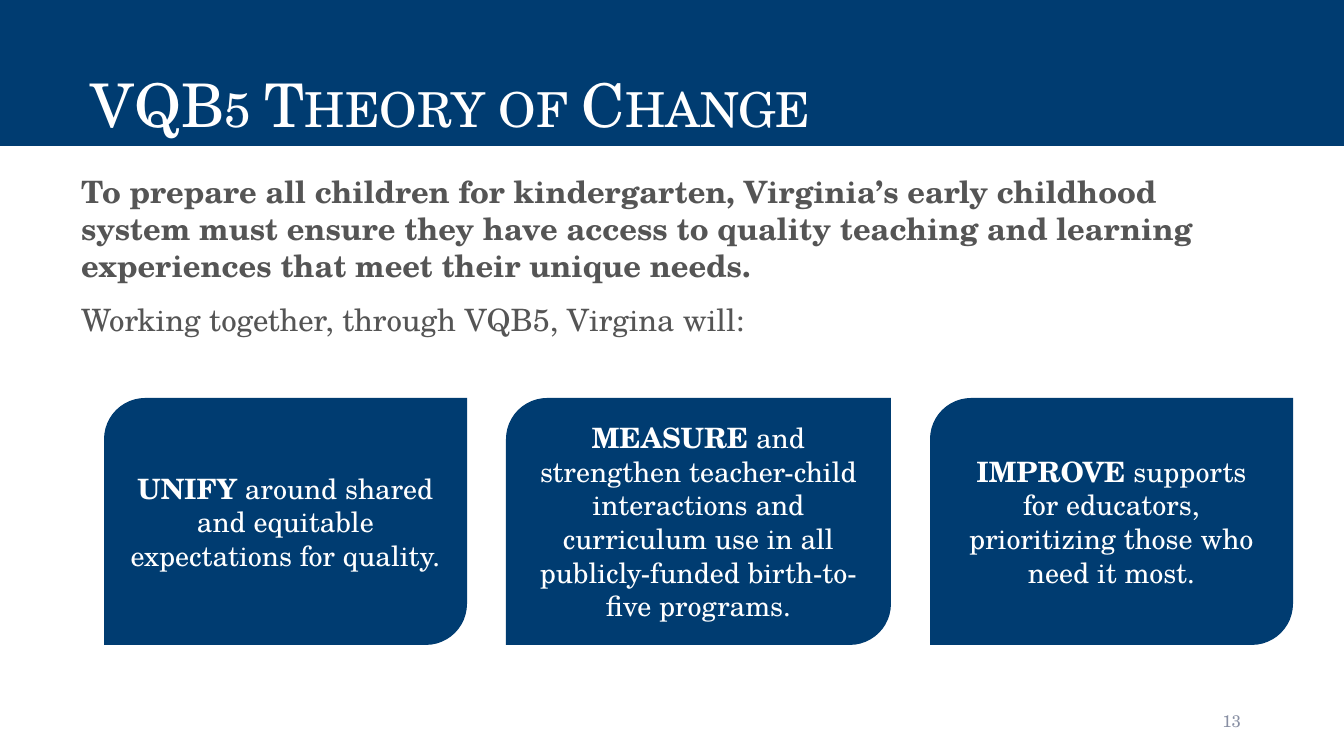
from dataclasses import dataclass

from lxml.etree import SubElement
from pptx import Presentation
from pptx.dml.color import RGBColor
from pptx.enum.shapes import MSO_SHAPE
from pptx.enum.text import MSO_ANCHOR, MSO_AUTO_SIZE, PP_ALIGN
from pptx.oxml.ns import qn
from pptx.util import Emu, Pt


@dataclass(frozen=True)
class Theme:
    font: str = "TeX Gyre Schola"
    navy: RGBColor = RGBColor(0x00, 0x3C, 0x71)
    white: RGBColor = RGBColor(0xFF, 0xFF, 0xFF)
    text: RGBColor = RGBColor(0x55, 0x55, 0x55)
    muted: RGBColor = RGBColor(0x88, 0x8F, 0xA3)
    title: int = 43
    body: int = 22
    card: int = 20
    note: int = 12


THEME = Theme()
SCALE = 914400 / 100.8

CARD_TOP, CARD_H, CARD_GAP = 398, 247, 39
CARDS = [
    (363, "UNIFY", " around shared and equitable expectations for quality."),
    (385, "MEASURE", " and strengthen teacher-child interactions and "
     "curriculum use in all publicly-funded birth-to-five programs."),
    (363, "IMPROVE", " supports for educators, prioritizing those who "
     "need it most."),
]
LEAD = ("To prepare all children for kindergarten, Virginia’s early childhood "
        "system must ensure they have access to quality teaching and learning "
        "experiences that meet their unique needs.")
INTRO = "Working together, through VQB5, Virgina will:"


def px(n):
    return Emu(round(n * SCALE))


def place(shape, *box):
    shape.left, shape.top, shape.width, shape.height = map(px, box)


def style(para, size, color, align=PP_ALIGN.LEFT):
    para.alignment = align
    font = para.font
    font.name, font.size = THEME.font, Pt(size)
    font.color.rgb = color


def paint(shape, color):
    shape.fill.solid()
    shape.fill.fore_color.rgb = color


def add_title(slide, text):
    """Fill the title placeholder as a full-width band in small capitals."""
    band = slide.shapes.title
    place(band, 0, 0, 1344, 146)
    paint(band, THEME.navy)
    frame = band.text_frame
    frame.auto_size = MSO_AUTO_SIZE.NONE
    frame.vertical_anchor = MSO_ANCHOR.BOTTOM
    frame.margin_left = px(91)
    para = frame.paragraphs[0]
    style(para, THEME.title, THEME.white)
    para.line_spacing = 0.9
    run = para.add_run()
    run.text = text
    run._r.get_or_add_rPr().set("cap", "small")


def add_body(slide, items):
    """Fill the body placeholder from (text, bold, space before) items."""
    body = slide.placeholders[1]
    place(body, 71, 168, 1207, 520)
    frame = body.text_frame
    frame.auto_size = MSO_AUTO_SIZE.NONE
    for i, (text, bold, gap) in enumerate(items):
        para = frame.add_paragraph() if i else frame.paragraphs[0]
        para.text = text
        para.space_before = Pt(gap)
        props = para._p.get_or_add_pPr()
        props.set("marL", "0")
        props.set("indent", "0")
        SubElement(props, qn("a:buNone"))
        style(para, THEME.body, THEME.text)
        para.font.bold = bold


def add_card(slide, left, width, key, rest):
    card = slide.shapes.add_shape(
        MSO_SHAPE.ROUND_2_DIAG_RECTANGLE,
        px(left), px(CARD_TOP), px(width), px(CARD_H))
    card.shadow.inherit = False
    paint(card, THEME.navy)
    card.line.fill.background()
    frame = card.text_frame
    frame.word_wrap = True
    frame.vertical_anchor = MSO_ANCHOR.MIDDLE
    frame.margin_left = frame.margin_right = px(13)
    frame.margin_top = frame.margin_bottom = px(13)
    para = frame.paragraphs[0]
    style(para, THEME.card, THEME.white, PP_ALIGN.CENTER)
    for text, bold in ((key, True), (rest, False)):
        run = para.add_run()
        run.text = text
        run.font.bold = bold


def add_number(slide, text):
    box = slide.shapes.add_textbox(px(949), px(701), px(302), px(40))
    frame = box.text_frame
    frame.word_wrap = True
    frame.vertical_anchor = MSO_ANCHOR.MIDDLE
    para = frame.paragraphs[0]
    para.text = text
    style(para, THEME.note, THEME.muted, PP_ALIGN.RIGHT)


def main():
    deck = Presentation()
    deck.slide_width, deck.slide_height = px(1344), px(756)
    slide = deck.slides.add_slide(deck.slide_layouts[1])
    add_title(slide, "VQB5 Theory of Change")
    add_body(slide, [(LEAD, True, 10), (INTRO, False, 12)])
    left = 104
    for width, key, rest in CARDS:
        add_card(slide, left, width, key, rest)
        left += width + CARD_GAP
    add_number(slide, "13")
    deck.save("out.pptx")


if __name__ == "__main__":
    main()
